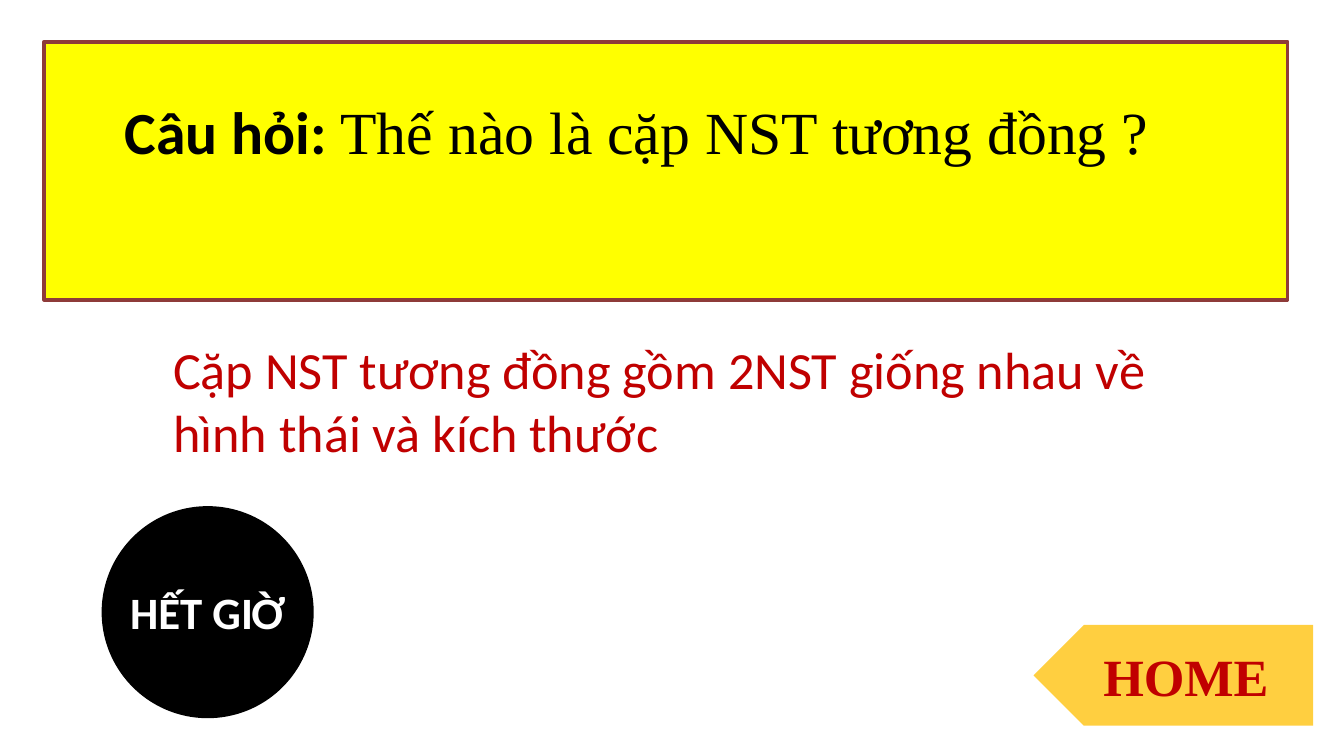
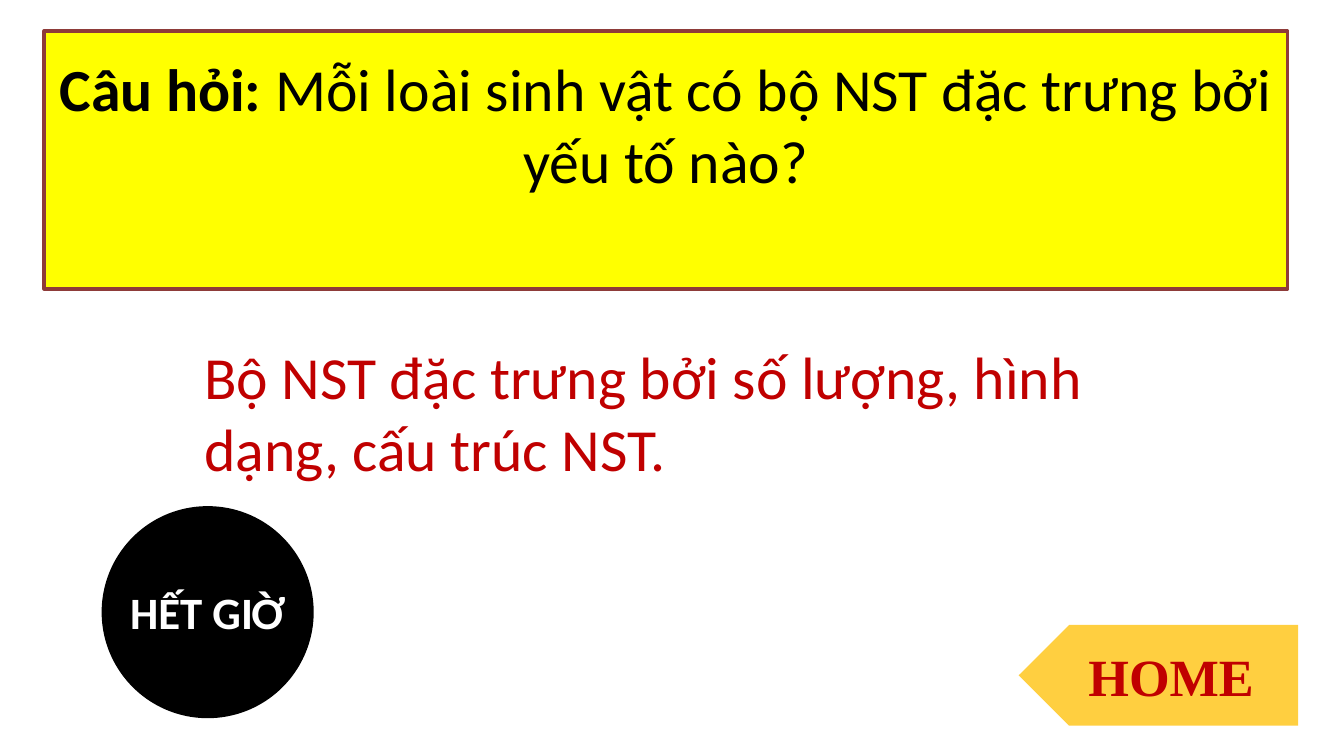
from dataclasses import dataclass
from lxml import etree
from pptx import Presentation
from pptx.dml.color import RGBColor
from pptx.enum.shapes import MSO_SHAPE
from pptx.enum.text import MSO_ANCHOR, MSO_AUTO_SIZE, PP_ALIGN
from pptx.oxml.ns import qn
from pptx.util import Inches, Pt

RECTANGLE, PENTAGON, OVAL = MSO_SHAPE.RECTANGLE, MSO_SHAPE.PENTAGON, MSO_SHAPE.OVAL
LEFT, CENTER, JUSTIFY = PP_ALIGN.LEFT, PP_ALIGN.CENTER, PP_ALIGN.JUSTIFY
MIDDLE, FIT_TEXT = MSO_ANCHOR.MIDDLE, MSO_AUTO_SIZE.SHAPE_TO_FIT_TEXT


@dataclass(frozen=True)
class Theme:
    sans: str = "Calibri"
    serif: str = "Times New Roman"
    white: str = "FFFFFF"
    black: str = "000000"
    yellow: str = "FFFF00"
    border: str = "8E3B39"
    red: str = "C00000"
    gold: str = "FFC000"
    question_size: int = 32
    home_size: int = 28
    timer_size: int = 24
    line_width: int = 2
    opacity: int = 75


THEME = Theme()

# Content; "room" is the free space kept below the question, in inches
QUESTION_LABEL = "Câu hỏi: "
TIMER_LABEL = "HẾT GIỜ"
HOME_LABEL = "HOME"
SLIDES = [
    {"question": "Thế nào là cặp NST tương đồng ?", "font": THEME.serif,
     "align": JUSTIFY, "indent": 0.5, "spacing": 1.15, "room": 0.73,
     "question_top": 0.31,
     "answer": "Cặp NST tương đồng gồm 2NST giống nhau về hình thái và kích thước",
     "answer_size": 28, "answer_at": (1.19, 2.31), "home_left": 7.69},
    {"question": "Mỗi loài sinh vật có bộ NST đặc trưng bởi yếu tố nào?",
     "font": THEME.sans, "align": CENTER, "indent": 0, "spacing": 1, "room": 0.59,
     "question_top": 0.23,
     "answer": "Bộ NST đặc trưng bởi số lượng, hình dạng, cấu trúc NST.",
     "answer_size": 32, "answer_at": (1.42, 2.4), "home_left": 7.58},
]

# Sizes shared by the slides, in inches
SLIDE_WIDTH = 10
SLIDE_HEIGHT = SLIDE_WIDTH * 9 / 16
QUESTION_LEFT, QUESTION_SIZE = 0.33, (9.25, 1.92)
ANSWER_SIZE = (7.54, 1.33)
HOME_TOP, HOME_SIZE = 4.65, (2.08, 0.75)
TIMER_AT, TIMER_DIAMETER, TIMER_RING = (0.71, 3.72), 1.67, 0.06
TIMER_TEXT = (0.87, 4.3, 1.36, 0.5)


def add_box(page, kind, left, top, width, height, fill, line=None, opacity=100):
    box = page.shapes.add_shape(kind, *map(Inches, (left, top, width, height)))
    box.shadow.inherit = False
    box.fill.solid()
    box.fill.fore_color.rgb = RGBColor.from_string(fill)
    if opacity < 100:
        color = box.fill._xPr.find(qn("a:solidFill"))[0]
        etree.SubElement(color, qn("a:alpha")).set("val", str(opacity * 1000))
    if line:
        box.line.color.rgb = RGBColor.from_string(line)
        box.line.width = Pt(THEME.line_width)
    else:
        box.line.fill.background()
    box.text_frame.word_wrap = True
    box.text_frame.vertical_anchor = MIDDLE
    return box


def write(box, spans, size, color, align):
    """Fill the first paragraph with (text, font, bold) spans."""
    para = box.text_frame.paragraphs[0]
    para.alignment = align
    for text, font, bold in spans:
        span = para.add_run()
        span.text = text
        span.font.name, span.font.size, span.font.bold = font, Pt(size), bold
        span.font.color.rgb = RGBColor.from_string(color)
    return para


def add_question(page, item):
    box = add_box(page, RECTANGLE, QUESTION_LEFT, item["question_top"], *QUESTION_SIZE,
                  THEME.yellow, THEME.border)
    box.text_frame.margin_bottom = Inches(item["room"])
    spans = [(QUESTION_LABEL, THEME.sans, True), (item["question"], item["font"], False)]
    para = write(box, spans, THEME.question_size, THEME.black, item["align"])
    para.line_spacing = item["spacing"]
    if item["indent"]:
        properties = para._p.get_or_add_pPr()
        properties.set("marL", str(Inches(item["indent"])))
        properties.set("indent", "0")


def add_answer(page, item):
    box = add_box(page, RECTANGLE, *item["answer_at"], *ANSWER_SIZE,
                  THEME.white, opacity=THEME.opacity)
    write(box, [(item["answer"], THEME.sans, False)], item["answer_size"], THEME.red, LEFT)


def add_home(page, left):
    box = add_box(page, PENTAGON, left, HOME_TOP, *HOME_SIZE,
                  THEME.gold, opacity=THEME.opacity)
    box._element.spPr.find(qn("a:xfrm")).set("flipH", "1")
    write(box, [(HOME_LABEL, THEME.serif, True)], THEME.home_size, THEME.red, CENTER)


def add_timer(page):
    # White ring with a black disc inside it
    for inset, fill, line in ((0, THEME.white, None),
                              (TIMER_RING, THEME.black, THEME.black)):
        left, top = (start + inset for start in TIMER_AT)
        diameter = TIMER_DIAMETER - 2 * inset
        add_box(page, OVAL, left, top, diameter, diameter, fill, line)
    label = page.shapes.add_textbox(*map(Inches, TIMER_TEXT))
    label.text_frame.word_wrap = False
    label.text_frame.auto_size = FIT_TEXT
    write(label, [(TIMER_LABEL, THEME.sans, True)], THEME.timer_size, THEME.white, LEFT)


def main():
    deck = Presentation()
    deck.slide_width, deck.slide_height = Inches(SLIDE_WIDTH), Inches(SLIDE_HEIGHT)
    blank = deck.slide_layouts[6]
    for item in SLIDES:
        page = deck.slides.add_slide(blank)
        add_question(page, item)
        add_answer(page, item)
        add_home(page, item["home_left"])
        add_timer(page)
    deck.save("out.pptx")


if __name__ == "__main__":
    main()
